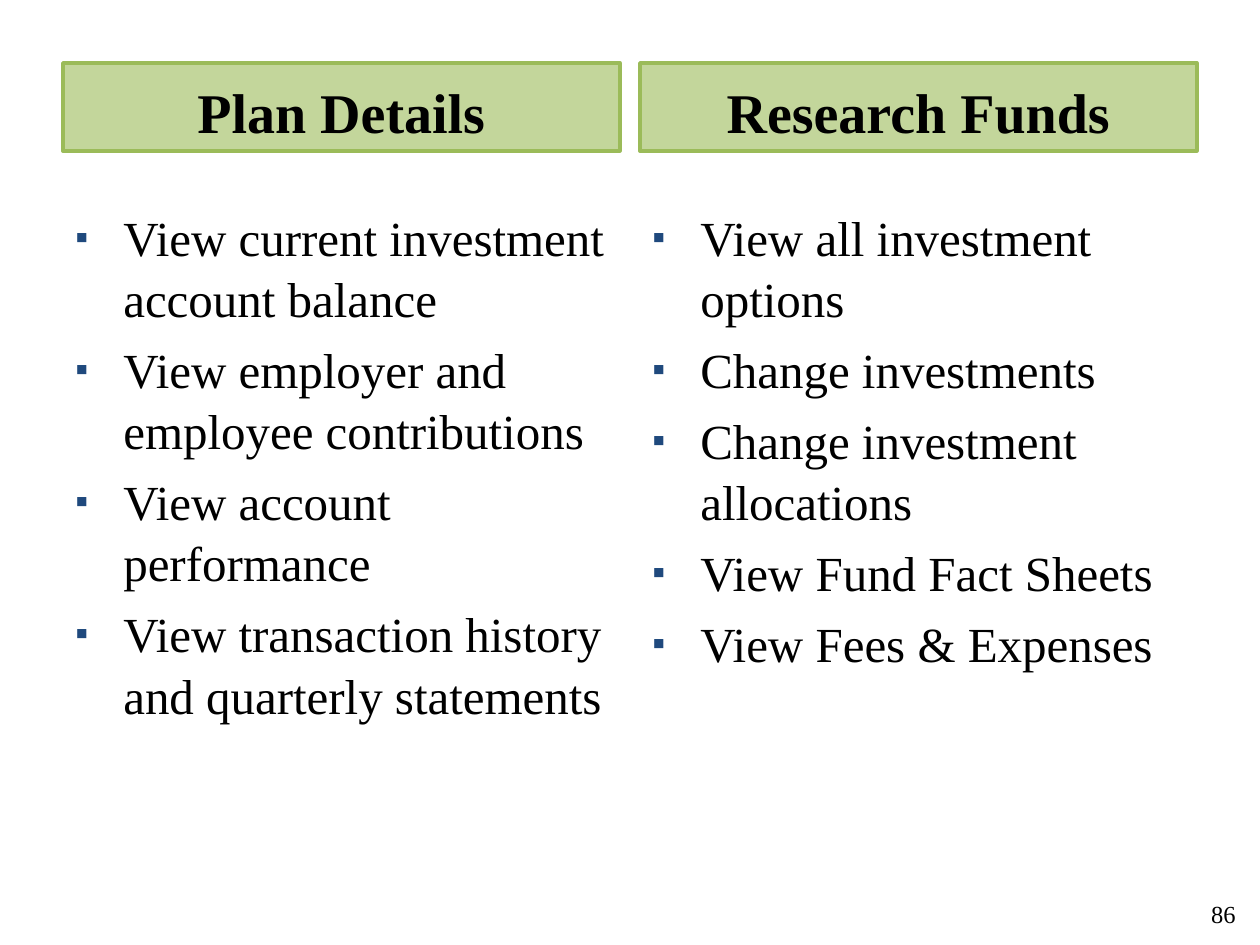
"""Build a two-column slide listing plan details and fund research features."""
from lxml import etree
from pptx import Presentation, util as u
from pptx.dml.color import RGBColor
from pptx.enum import shapes, text
from pptx.oxml.ns import qn

PX = u.Inches(1) // 126
BLACK = RGBColor(0x00, 0x00, 0x00)
PALE_GREEN = RGBColor(0xC3, 0xD6, 0x9B)
GREEN = RGBColor(0x9B, 0xBB, 0x59)
NAVY = RGBColor(0x1F, 0x49, 0x7D)
FONT = "Times New Roman"
COLUMN_WIDTH = 557
COLUMNS = [
    (63, "Plan Details", [
        "View current investment account balance",
        "View employer and employee contributions",
        "View account performance",
        "View transaction history and quarterly statements",
    ]),
    (640, "Research Funds", [
        "View all investment options",
        "Change investments",
        "Change investment allocations",
        "View Fund Fact Sheets",
        "View Fees & Expenses",
    ]),
]


def add_run(paragraph, words, size, bold=False):
    run = paragraph.add_run()
    run.text = words
    run.font.name = FONT
    run.font.size = u.Pt(size)
    run.font.bold = bold
    run.font.color.rgb = BLACK


def add_bullet(paragraph):
    properties = paragraph._p.get_or_add_pPr()
    properties.set("marL", str(48 * PX))
    properties.set("indent", str(-48 * PX))
    color = etree.SubElement(properties, qn("a:buClr"))
    etree.SubElement(color, qn("a:srgbClr"), val=str(NAVY))
    etree.SubElement(properties, qn("a:buSzPct"), val="75000")
    etree.SubElement(properties, qn("a:buFont"), typeface=FONT)
    etree.SubElement(properties, qn("a:buChar"), char="▪")


presentation = Presentation()
presentation.slide_width = 1260 * PX
presentation.slide_height = 945 * PX
slide = presentation.slides.add_slide(presentation.slide_layouts[6])

page_number = slide.shapes.add_textbox(1194 * PX, 893 * PX, 54 * PX, 42 * PX)
page_number.text_frame.word_wrap = False
page_number.text_frame.vertical_anchor = text.MSO_ANCHOR.MIDDLE
paragraph = page_number.text_frame.paragraphs[0]
paragraph.alignment = text.PP_ALIGN.RIGHT
add_run(paragraph, "86", 14)

for left, heading, items in COLUMNS:
    header = slide.shapes.add_shape(
        shapes.MSO_SHAPE.RECTANGLE, left * PX, 63 * PX, COLUMN_WIDTH * PX, 88 * PX)
    header.shadow.inherit = False
    header.fill.solid()
    header.fill.fore_color.rgb = PALE_GREEN
    header.line.color.rgb = GREEN
    header.line.width = u.Pt(2)
    header.text_frame.word_wrap = True
    header.text_frame.vertical_anchor = text.MSO_ANCHOR.BOTTOM
    paragraph = header.text_frame.paragraphs[0]
    paragraph.alignment = text.PP_ALIGN.CENTER
    add_run(paragraph, heading, 32, bold=True)

    body = slide.shapes.add_textbox(left * PX, 199 * PX, COLUMN_WIDTH * PX, 645 * PX)
    frame = body.text_frame
    frame.word_wrap = True
    for index, item in enumerate(items):
        paragraph = frame.add_paragraph() if index else frame.paragraphs[0]
        add_bullet(paragraph)
        paragraph.line_spacing = 1.04
        if index:
            paragraph.space_before = u.Pt(5.6)
        add_run(paragraph, item, 28)

presentation.save("out.pptx")
